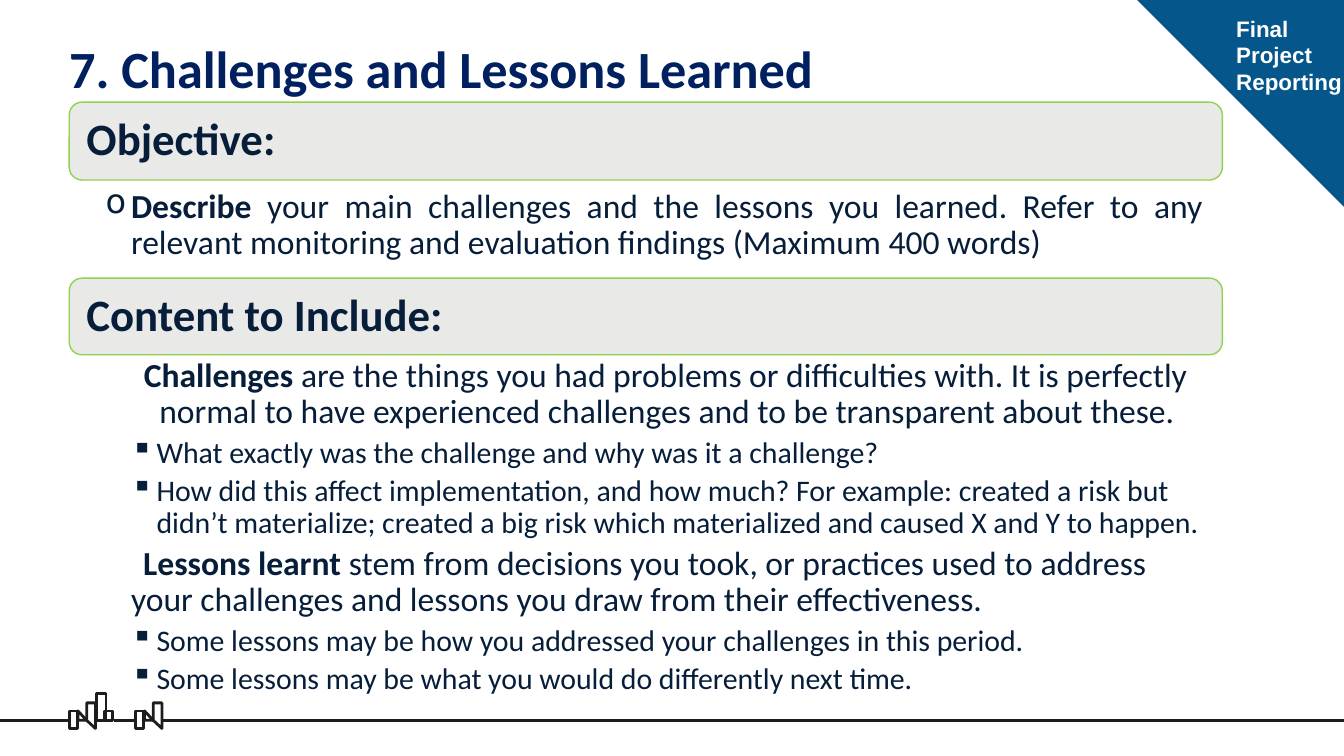
"""Builds the slide on challenges and lessons learned."""
from lxml import etree
from pptx import Presentation, util as u
from pptx.dml.color import RGBColor
from pptx.enum import shapes, text
from pptx.oxml.ns import qn

NAVY = RGBColor(0x00, 0x20, 0x60)
INK = RGBColor(0x07, 0x1E, 0x3A)
BLUE = RGBColor(0x04, 0x56, 0x8B)
GREY = RGBColor(0xE9, 0xE9, 0xE8)
GREEN = RGBColor(0x92, 0xD0, 0x50)
BLACK = RGBColor(0x1D, 0x1E, 0x1C)
WHITE = RGBColor(0xFF, 0xFF, 0xFF)

COLUMNS = 100
LEFT, WIDTH = 5.15, 85.8
GROUND = 53.6
BODY_INSETS = (2.7, 0.3, 1.4, 0.3)


class Board:
    def __init__(self, deck):
        self.cell = deck.slide_width / COLUMNS
        self.page = deck.slides.add_slide(deck.slide_layouts[5])

    def size(self, cells):
        return u.Emu(round(cells * self.cell))

    def place(self, *cells):
        return [self.size(value) for value in cells]

    def style(self, shape, fill=None, line=None, weight=1.5):
        shape.shadow.inherit = False
        if fill is None:
            shape.fill.background()
        else:
            shape.fill.solid()
            shape.fill.fore_color.rgb = fill
        if line is None:
            shape.line.fill.background()
        else:
            shape.line.color.rgb = line
            shape.line.width = u.Pt(weight)
        return shape

    def shape(self, kind, at, **look):
        return self.style(self.page.shapes.add_shape(kind, *self.place(*at)), **look)

    def outline(self, points):
        first, *rest = [self.place(*point) for point in points]
        builder = self.page.shapes.build_freeform(*first)
        builder.add_line_segments(rest, close=True)
        self.style(builder.convert_to_shape(), line=BLACK)

    def ground_line(self, start, end):
        line = self.page.shapes.add_connector(
            shapes.MSO_CONNECTOR.STRAIGHT, *self.place(start, GROUND, end, GROUND))
        line.line.color.rgb = BLACK
        line.line.width = u.Pt(1.5)
        etree.SubElement(line._element.spPr, qn("a:effectLst"))

    def frame(self, box, insets, anchor=text.MSO_ANCHOR.TOP, wrap=True):
        frame = box.text_frame
        frame.word_wrap = wrap
        frame.vertical_anchor = anchor
        (frame.margin_left, frame.margin_top,
         frame.margin_right, frame.margin_bottom) = self.place(*insets)
        return frame

    def text_box(self, at, insets, **options):
        return self.frame(self.page.shapes.add_textbox(*self.place(*at)), insets, **options)

    def font(self, font, size, color=INK, bold=None, name="Calibri"):
        font.name, font.size, font.bold = name, u.Pt(size), bold
        font.color.rgb = color

    def title(self, words):
        title = self.page.shapes.title
        title.left, title.top, title.width, title.height = self.place(LEFT, 2.7, 89.7, 4.7)
        para = self.frame(title, (0, 0, 0, 0), text.MSO_ANCHOR.MIDDLE).paragraphs[0]
        para.text = words
        para.alignment = text.PP_ALIGN.LEFT
        self.font(para.font, 28, NAVY, True)

    def corner(self, words):
        self.shape(shapes.MSO_SHAPE.RIGHT_TRIANGLE, (84.6, 0, 15.4, 15.4), fill=BLUE).rotation = 180
        para = self.text_box((91, 0.6, 10, 7.1), (1, 0.5, 1, 0.5), wrap=False).paragraphs[0]
        para.text = words
        self.font(para.font, 12, WHITE, True, "Arial")

    def heading(self, words, top, height):
        self.shape(shapes.MSO_SHAPE.ROUNDED_RECTANGLE, (LEFT, top, WIDTH, height),
                   fill=GREY, line=GREEN, weight=0.75)
        at = (LEFT + 0.3, top + 0.25, WIDTH - 0.6, height - 0.5)
        para = self.text_box(at, (1, 1, 1, 1), anchor=text.MSO_ANCHOR.MIDDLE).paragraphs[0]
        para.text = words
        para.line_spacing = 0.9
        self.font(para.font, 24, bold=True)

    def body(self, top, height, items):
        frame = self.text_box((LEFT, top, WIDTH, height), BODY_INSETS)
        for index, item in enumerate(items):
            para = frame.add_paragraph() if index else frame.paragraphs[0]
            self.item(para, **item)

    def item(self, para, words, lead=None, size=18, margin=1.9, indent=-1.9, bullet=None,
             align=text.PP_ALIGN.LEFT):
        para.alignment = align
        para.line_spacing = 0.9
        para.space_after = u.Pt(size * 0.2)
        para.level = 2 if size < 18 else 1
        for part, bold in ((lead, True), (words, False)):
            if part:
                span = para.add_run()
                span.text = part
                self.font(span.font, size, bold=bold)
        properties = para._p.get_or_add_pPr()
        properties.set("marL", str(self.size(margin)))
        properties.set("indent", str(self.size(indent)))
        mark = etree.SubElement(properties, qn("a:buChar" if bullet else "a:buNone"))
        if bullet:
            mark.set("char", bullet)

    def building(self, left):
        self.shape(shapes.MSO_SHAPE.RECTANGLE, (left, 52.9, 0.6, 1.3), line=BLACK)
        roof, wall, end = left + 0.65, left + 1.3, left + 1.95
        self.outline([(wall, GROUND), (roof, GROUND), (roof, 52.9)])
        self.outline([(wall, 52.3), (wall, GROUND), (end, 54.2), (end, 52.3)])

    def skyline(self):
        for left in (LEFT, 10.1):
            self.building(left)
        self.shape(shapes.MSO_SHAPE.RECTANGLE, (7.2, 51.6, 0.7, 2), line=BLACK)
        self.shape(shapes.MSO_SHAPE.RECTANGLE, (7.8, 52.9, 0.6, 0.7), line=BLACK)
        for start, end in ((0, LEFT), (8.5, 10.1), (12, COLUMNS)):
            self.ground_line(start, end)


def point(words):
    return dict(words=words, size=16, margin=3.8, bullet="▪")


def main():
    deck = Presentation()
    deck.slide_width = u.Inches(10)
    deck.slide_height = u.Inches(10 * 9 / 16)
    board = Board(deck)
    board.skyline()
    board.title("7. Challenges and Lessons Learned")
    board.corner("Final \vProject\vReporting")
    board.heading("Objective:", 7.6, 5.8)
    board.body(13.8, 6.7, [
        dict(lead="Describe", bullet="o", align=text.PP_ALIGN.JUSTIFY,
             words=" your main challenges and the lessons you learned. Refer to any relevant "
                   "monitoring and evaluation findings (Maximum 400 words)"),
    ])
    board.heading("Content to Include:", 20.7, 5.7)
    board.body(26.35, 24.5, [
        dict(lead="Challenges", indent=-0.2, align=text.PP_ALIGN.CENTER,
             words=" are the things you had problems or difficulties with. It is perfectly "
                   "normal to have experienced challenges and to be transparent about these."),
        point("What exactly was the challenge and why was it a challenge?"),
        point("How did this affect implementation, and how much? For example: created a risk "
              "but didn’t materialize; created a big risk which materialized and caused X and "
              "Y to happen."),
        dict(lead="Lessons learnt ", indent=0.9,
             words="stem from decisions you took, or practices used to address your challenges "
                   "and lessons you draw from their effectiveness."),
        point("Some lessons may be how you addressed your challenges in this period."),
        point("Some lessons may be what you would do differently next time."),
    ])
    deck.save("out.pptx")


if __name__ == "__main__":
    main()
